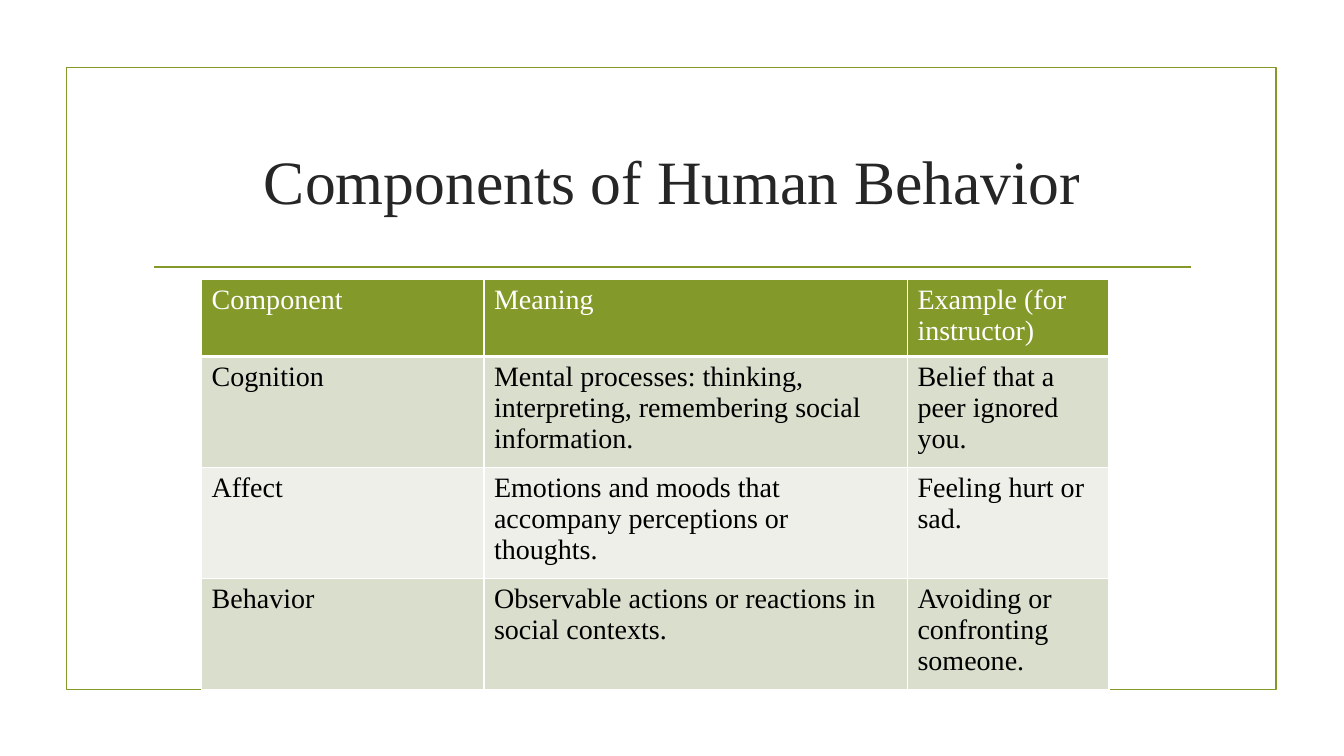
from dataclasses import dataclass

from lxml import etree
from pptx import Presentation
from pptx.dml.color import RGBColor
from pptx.enum.shapes import MSO_CONNECTOR, MSO_SHAPE
from pptx.enum.text import MSO_ANCHOR, PP_ALIGN
from pptx.oxml.ns import qn
from pptx.util import Emu, Pt

RECTANGLE = MSO_SHAPE.RECTANGLE
STRAIGHT = MSO_CONNECTOR.STRAIGHT
MIDDLE = MSO_ANCHOR.MIDDLE
LEFT, CENTER = PP_ALIGN.LEFT, PP_ALIGN.CENTER
EMU_PER_PX = 9144  # 100 px to the inch


@dataclass(frozen=True)
class Theme:
    font: str = "Times New Roman"
    accent: str = "83992A"
    title: str = "262626"
    body: str = "000000"
    white: str = "FFFFFF"
    bands: tuple = ("D9DECD", "EDEFE8")
    title_size: int = 44
    table_size: int = 20
    line_width: float = 1.25
    border_width: int = 1
    header_border_width: int = 3


def px(length):
    return Emu(length * EMU_PER_PX)


def color(value):
    return RGBColor.from_string(value)


class SlideBuilder:
    def __init__(self, slide, theme):
        self.slide = slide
        self.theme = theme

    def style_line(self, line):
        line.color.rgb = color(self.theme.accent)
        line.width = Pt(self.theme.line_width)

    def set_text(self, text_frame, text, size, font_color, alignment):
        paragraph = text_frame.paragraphs[0]
        paragraph.text = text
        paragraph.alignment = alignment
        font = paragraph.runs[0].font
        font.color.rgb = color(font_color)
        font_format = {"name": self.theme.font, "size": Pt(size), "bold": False}
        for name, value in font_format.items():
            setattr(font, name, value)

    def frame(self, left, top, width, height):
        shape = self.slide.shapes.add_shape(
            RECTANGLE, px(left), px(top), px(width), px(height))
        shape.shadow.inherit = False
        shape.fill.background()
        self.style_line(shape.line)

    def rule(self, left, right, top):
        connector = self.slide.shapes.add_connector(
            STRAIGHT, px(left), px(top), px(right), px(top))
        self.style_line(connector.line)
        etree.SubElement(connector.element.spPr, qn("a:effectLst"))

    def title(self, text, left, top, width, height):
        shape = self.slide.shapes.add_textbox(
            px(left), px(top), px(width), px(height))
        text_frame = shape.text_frame
        text_frame.word_wrap = True
        text_frame.vertical_anchor = MIDDLE
        self.set_text(text_frame, text, self.theme.title_size,
                      self.theme.title, CENTER)

    def border(self, cell, is_header):
        properties = cell._tc.get_or_add_tcPr()
        theme = self.theme
        bottom = theme.header_border_width if is_header else theme.border_width
        widths = {"lnL": theme.border_width, "lnR": theme.border_width,
                  "lnT": theme.border_width, "lnB": bottom}
        for side, width in widths.items():
            line = etree.SubElement(properties, qn(f"a:{side}"), w=str(Pt(width)))
            fill = etree.SubElement(line, qn("a:solidFill"))
            etree.SubElement(fill, qn("a:srgbClr"), val=theme.white)

    def table(self, rows, left, top, height, column_widths, row_height):
        shape = self.slide.shapes.add_table(
            len(rows), len(column_widths), px(left), px(top),
            px(sum(column_widths)), px(row_height * len(rows)))
        table = shape.table
        for column, width in zip(table.columns, column_widths):
            column.width = px(width)
        shape.height = px(height)
        for row_index, row in enumerate(rows):
            is_header = row_index == 0
            band = self.theme.bands[(row_index - 1) % 2]
            fill_color = self.theme.accent if is_header else band
            font_color = self.theme.white if is_header else self.theme.body
            for column_index, text in enumerate(row):
                cell = table.cell(row_index, column_index)
                self.border(cell, is_header)
                cell.fill.solid()
                cell.fill.fore_color.rgb = color(fill_color)
                self.set_text(cell.text_frame, text, self.theme.table_size,
                              font_color, LEFT)


COMPONENTS = [
    ("Component", "Meaning", "Example (for instructor)"),
    ("Cognition",
     "Mental processes: thinking, interpreting, remembering social information.",
     "Belief that a peer ignored you."),
    ("Affect",
     "Emotions and moods that accompany perceptions or thoughts.",
     "Feeling hurt or sad."),
    ("Behavior",
     "Observable actions or reactions in social contexts.",
     "Avoiding or confronting someone."),
]


def main():
    presentation = Presentation()
    presentation.slide_width = px(1333)
    presentation.slide_height = px(750)
    slide = presentation.slides.add_slide(presentation.slide_layouts[6])
    builder = SlideBuilder(slide, Theme())

    # Border and title rule
    builder.frame(66, 67, 1200, 617)
    builder.rule(153, 1181, 265)

    # Title
    builder.title("Components of Human Behavior", 142, 107, 1050, 143)

    # Table of components
    builder.table(COMPONENTS, 200, 277, 407, (280, 420, 200), 60)

    presentation.save("out.pptx")


if __name__ == "__main__":
    main()
